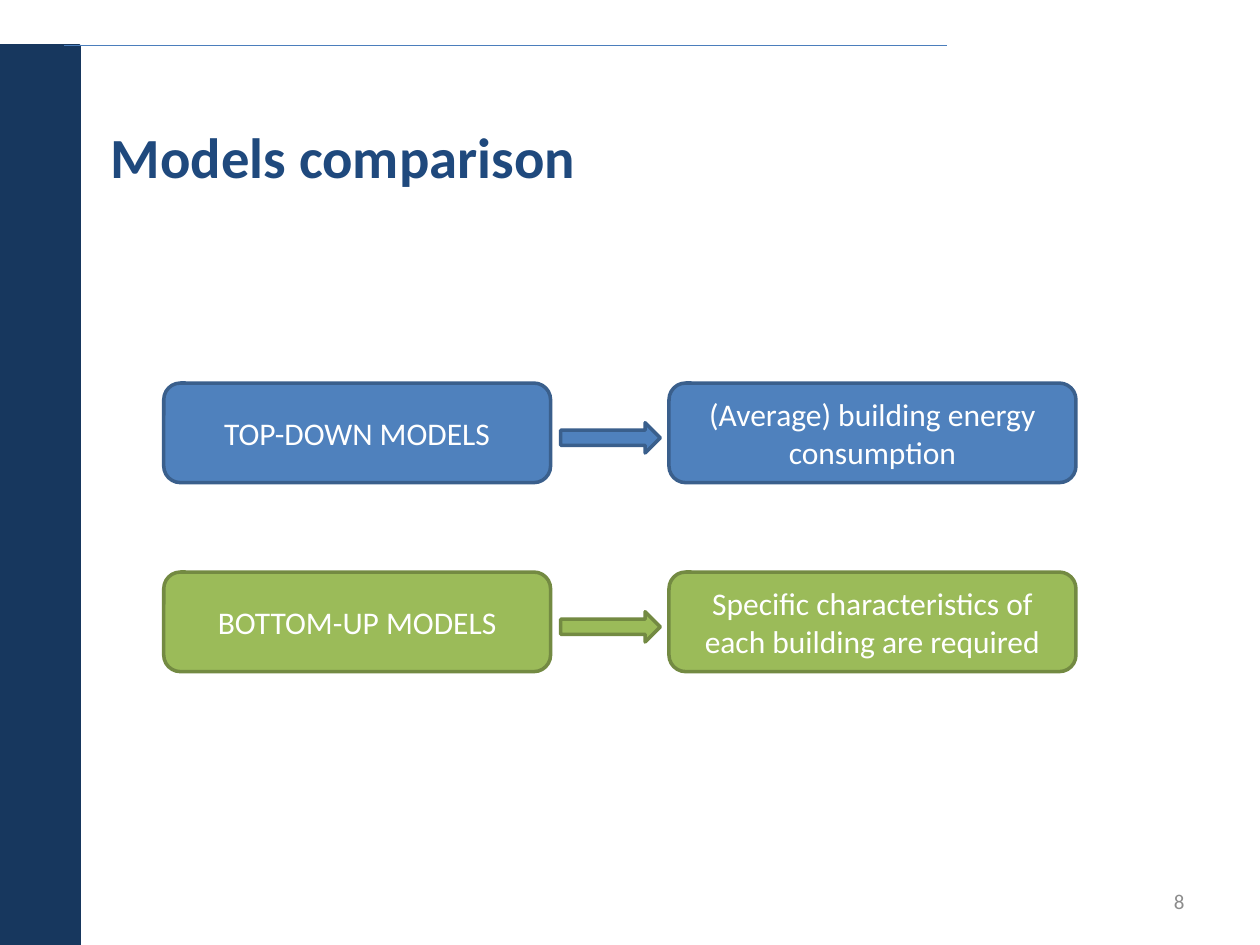
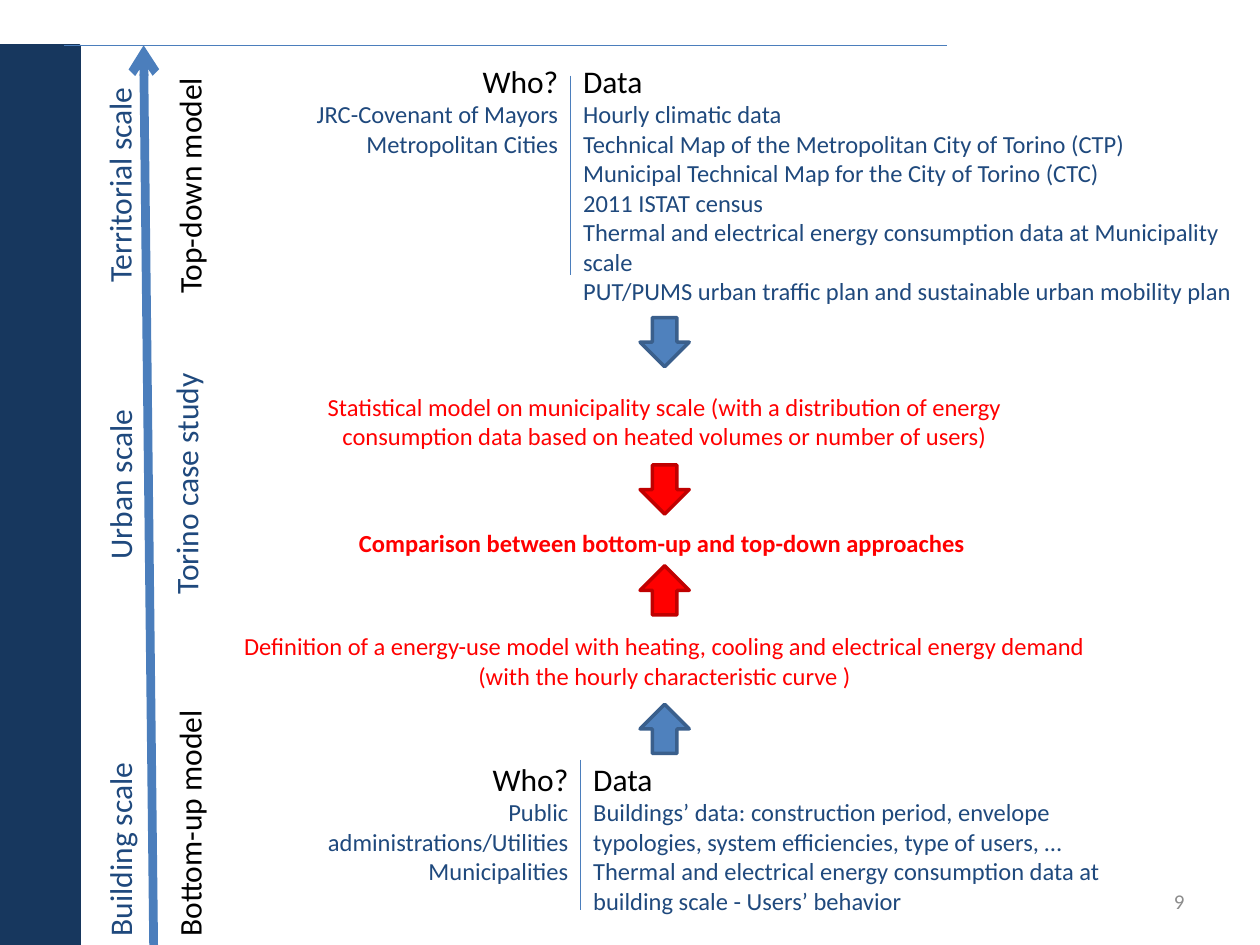
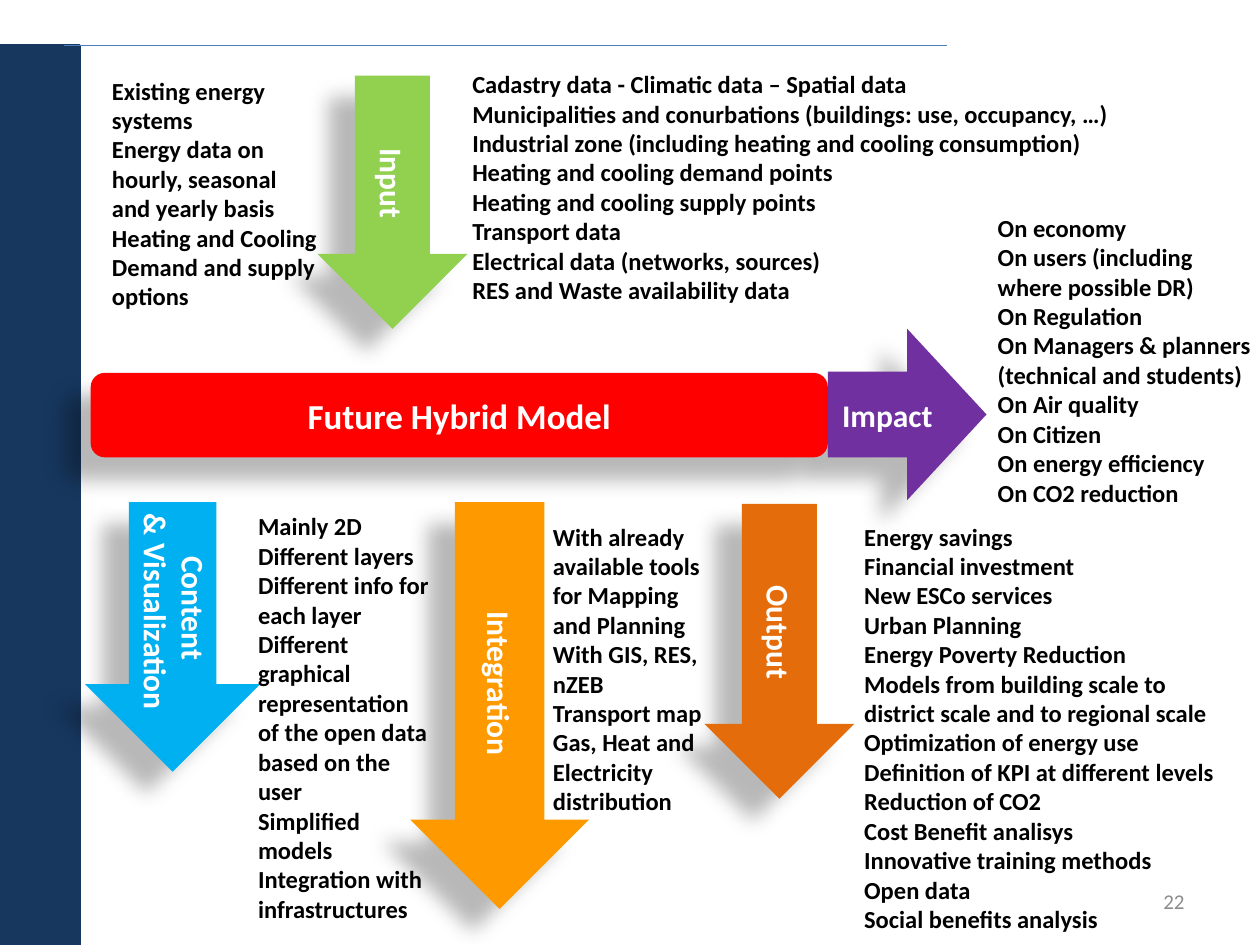
"""Builds three slides comparing top-down, bottom-up and hybrid energy models."""
from dataclasses import dataclass

from lxml.etree import SubElement
from pptx import Presentation
from pptx.dml.color import RGBColor
from pptx.enum.shapes import MSO_CONNECTOR, MSO_SHAPE
from pptx.enum.text import MSO_ANCHOR, PP_ALIGN
from pptx.oxml.ns import qn
from pptx.util import Inches, Pt


@dataclass(frozen=True)
class Theme:
    """Colours, font and type sizes shared by the slides."""
    font: str = "Calibri"
    band: str = "17375E"
    navy: str = "1F497D"
    rule: str = "4B7EBC"
    blue: str = "4F81BD"
    blue_edge: str = "3A5F8C"
    olive: str = "9BBB59"
    olive_edge: str = "738A42"
    red: str = "FF0000"
    red_edge: str = "C00000"
    green: str = "92D050"
    purple: str = "7030A0"
    rust: str = "E46C0A"
    amber: str = "FF9900"
    sky: str = "00B0F0"
    grey: str = "8C8C8C"
    black: str = "000000"
    white: str = "FFFFFF"
    title: float = 32.4
    banner: int = 20
    label: int = 18
    body: int = 14
    number: int = 12


THEME = Theme()
deck = Presentation()
deck.slide_width, deck.slide_height = Inches(10), Inches(7.5)
CELL = deck.slide_width / 100


def add_block(slide, kind, frame, fill=None, edge=None, rotation=0):
    """Add a shape, or a text box when kind is None, framed in grid cells."""
    place = [round(cells * CELL) for cells in frame]
    if kind is None:
        block = slide.shapes.add_textbox(*place)
    else:
        block = slide.shapes.add_shape(kind, *place)
        block.shadow.inherit = False
        block.fill.solid()
        block.fill.fore_color.rgb = RGBColor.from_string(fill)
        if edge:
            block.line.color.rgb = RGBColor.from_string(edge)
            block.line.width = Pt(2)
        else:
            block.line.fill.background()
    block.rotation = rotation
    return block


def write(block, lines, size, color, bold=False, align=PP_ALIGN.LEFT):
    """Fill a block with one paragraph per line and format the runs."""
    block.text_frame.text = "\n".join(lines)
    block.text_frame.word_wrap = True
    for paragraph in block.text_frame.paragraphs:
        paragraph.alignment = align
        for run in paragraph.runs:
            run.font.name = THEME.font
            run.font.size = Pt(size)
            run.font.bold = bold
            run.font.color.rgb = RGBColor.from_string(color)


comparison = deck.slides.add_slide(deck.slide_layouts[5])
scales = deck.slides.add_slide(deck.slide_layouts[6])
hybrid = deck.slides.add_slide(deck.slide_layouts[6])

band = add_block(comparison, MSO_SHAPE.RECTANGLE, (0, 3.6, 6.3, 71.4), THEME.band, THEME.band)
lines = []
for slide, ends, weight in (
    (comparison, (5.1, 3.6, 75.2, 3.6), 0.75),
    (scales, (12.2, 75.3, 11.4, 3.6), 5),
    (scales, (45.3, 6, 45.3, 21.8), 0.75),
    (scales, (46.1, 60.3, 46.1, 72.2), 0.75),
):
    line = slide.shapes.add_connector(
        MSO_CONNECTOR.STRAIGHT, *[round(cells * CELL) for cells in ends])
    line.line.color.rgb = RGBColor.from_string(THEME.rule)
    line.line.width = Pt(weight)
    SubElement(line.element.spPr, qn("a:effectLst"))
    lines.append(line)
header_rule, scale_axis = lines[:2]
SubElement(scale_axis.element.spPr.find(qn("a:ln")), qn("a:tailEnd"), type="arrow")
for shared in (band, header_rule):
    deck.slide_master.shapes.element.append(shared.element)

for slide, number in ((comparison, "8"), (scales, "9"), (hybrid, "22")):
    page = add_block(slide, None, (71.7, 69.5, 23.3, 4))
    write(page, [number], THEME.number, THEME.grey, align=PP_ALIGN.RIGHT)
    page.text_frame.vertical_anchor = MSO_ANCHOR.MIDDLE

title = comparison.shapes.title
title.left, title.top, title.width, title.height = [
    round(cells * CELL) for cells in (7.8, 9.2, 90.6, 6.3)]
write(title, ["Models comparison"], THEME.title, THEME.navy, bold=True)
title.text_frame.vertical_anchor = MSO_ANCHOR.MIDDLE

for row, (model, need, fill, edge) in enumerate((
    ("TOP-DOWN MODELS", "(Average) building energy consumption", THEME.blue, THEME.blue_edge),
    ("BOTTOM-UP MODELS", "Specific characteristics of each building are required",
     THEME.olive, THEME.olive_edge),
)):
    top = 30.4 + 15 * row
    add_block(comparison, MSO_SHAPE.RIGHT_ARROW, (44.5, top + 3.15, 7.9, 2.4), fill, edge)
    for left, width, words in ((13, 30.7, model), (53.1, 32.3, need)):
        card = add_block(comparison, MSO_SHAPE.ROUNDED_RECTANGLE,
                         (left, top, width, 7.9), fill, edge)
        write(card, [words], THEME.label, THEME.white, align=PP_ALIGN.CENTER)

for words, left, top, width, color, align in (
    ("Bottom-up model", 2.4, 60.7, 25.2, THEME.black, PP_ALIGN.LEFT),
    ("Top-down model", 2.4, 15.8, 25.2, THEME.black, PP_ALIGN.RIGHT),
    ("Building scale", -3.1, 60.7, 25.2, THEME.navy, PP_ALIGN.LEFT),
    ("Territorial scale", 0.4, 13, 18.1, THEME.navy, PP_ALIGN.RIGHT),
    ("Urban scale", 2, 35.9, 15, THEME.navy, PP_ALIGN.LEFT),
    ("Torino case study", 4.5, 35.9, 20.5, THEME.navy, PP_ALIGN.LEFT),
):
    scale_label = add_block(scales, None, (left, top, width, 4), rotation=270)
    write(scale_label, [words], THEME.label, color, align=align)

for frame, align, entries in (
    ((19.3, 4.4, 26, 8.8), PP_ALIGN.RIGHT,
     ["Who?", "JRC-Covenant of Mayors", "Metropolitan Cities"]),
    ((45.3, 4.4, 54.3, 20.5), PP_ALIGN.LEFT,
     ["Data", "Hourly climatic data",
      "Technical Map of the Metropolitan City of Torino (CTP)",
      "Municipal Technical Map for the City of Torino (CTC)",
      "2011 ISTAT census",
      "Thermal and electrical energy consumption data at Municipality scale",
      "PUT/PUMS urban traffic plan and sustainable urban mobility plan"]),
    ((20.1, 59.8, 26, 11.1), PP_ALIGN.RIGHT,
     ["Who?", "Public administrations/Utilities", "Municipalities"]),
    ((46.1, 59.8, 43.3, 13.5), PP_ALIGN.LEFT,
     ["Data",
      "Buildings’ data: construction period, envelope typologies, system efficiencies, "
      "type of users, …",
      "Thermal and electrical energy consumption data at building scale - Users’ behavior"]),
):
    sources = add_block(scales, None, frame)
    write(sources, entries, THEME.body, THEME.navy, align=align)
    heading = sources.text_frame.paragraphs[0].runs[0].font
    heading.size = Pt(THEME.label)
    heading.color.rgb = RGBColor.from_string(THEME.black)

for frame, words, bold in (
    ((24, 30.6, 57.5, 5.7),
     "Statistical model on municipality scale (with a distribution of energy consumption data "
     "based on heated volumes or number of users)", False),
    ((24, 41.4, 57.5, 3.4), "Comparison between bottom-up and top-down approaches ", True),
    ((17.3, 49.6, 70.9, 5.7),
     "Definition of a energy-use model with heating, cooling and electrical energy demand "
     "(with the hourly characteristic curve )", False),
):
    step = add_block(scales, None, frame)
    write(step, [words], THEME.body, THEME.red, bold, PP_ALIGN.CENTER)

for top, fill, edge, rotation in (
    (25.2, THEME.blue, THEME.blue_edge, 0),
    (36.9, THEME.red, THEME.red_edge, 0),
    (44.9, THEME.red, THEME.red_edge, 180),
    (55.9, THEME.blue, THEME.blue_edge, 180),
):
    add_block(scales, MSO_SHAPE.DOWN_ARROW, (50.8, top, 3.9, 3.9), fill, edge, rotation)

for kind, frame, rotation, fill, words, size in (
    (MSO_SHAPE.RIGHT_ARROW, (3, 43.6, 21.4, 13.9), 90, THEME.sky, "", THEME.label),
    (MSO_SHAPE.DOWN_ARROW, (25.2, 6, 11.9, 20.1), 0, THEME.green, "Input", THEME.label),
    (MSO_SHAPE.RIGHT_ARROW, (65.7, 26.1, 12.6, 13.6), 0, THEME.purple, "Impact", THEME.label),
    (MSO_SHAPE.DOWN_ARROW, (55.9, 40, 11.9, 23.4), 0, THEME.rust, "Output", THEME.label),
    (MSO_SHAPE.RIGHT_ARROW, (23.5, 48.9, 32.3, 14.2), 90, THEME.amber, "Integration", THEME.label),
    (MSO_SHAPE.ROUNDED_RECTANGLE, (7.2, 29.6, 58.5, 6.7), 0, THEME.red,
     "Future Hybrid Model", THEME.banner),
):
    stage = add_block(hybrid, kind, frame, fill, rotation=rotation)
    shadow = SubElement(stage.element.spPr.find(qn("a:effectLst")), qn("a:outerShdw"),
                        blurRad=str(Pt(11.8)), dist=str(Pt(19.7)),
                        dir=str(141 * 60000), rotWithShape="0")
    tint = SubElement(shadow, qn("a:srgbClr"), val=THEME.black)
    SubElement(tint, qn("a:alpha"), val="28000")
    if words:
        write(stage, [words], size, THEME.white, True, PP_ALIGN.CENTER)
    if kind == MSO_SHAPE.DOWN_ARROW:
        stage.element.txBody.bodyPr.set("vert", "vert")

content_label = add_block(hybrid, None, (5, 45, 17.7, 7.1), rotation=90)
write(content_label, ["Content ", "& Visualization"], THEME.label, THEME.white,
      True, PP_ALIGN.CENTER)
content_label.text_frame.word_wrap = False

for frame, entries in (
    ((36.5, 5, 52.7, 22.9),
     ["Cadastry data - Climatic data – Spatial data",
      "Municipalities and conurbations (buildings: use, occupancy, …)",
      "Industrial zone (including heating and cooling consumption)",
      "Heating and cooling demand points", "Heating and cooling supply points",
      "Transport data", "Electrical data (networks, sources)",
      "RES and Waste availability data"]),
    ((78.2, 16.4, 22.5, 29.3),
     ["On economy", "On users (including where possible DR)", "On Regulation",
      "On Managers & planners (technical and students)", "On Air quality", "On Citizen",
      "On energy efficiency", "On CO2 reduction"]),
    ((67.6, 40.9, 29.8, 38.7),
     ["Energy savings", "Financial investment", "New ESCo services", "Urban Planning",
      "Energy Poverty Reduction",
      "Models from building scale to district scale and to regional scale",
      "Optimization of energy use", "Definition of KPI at different levels",
      "Reduction of CO2", "Cost Benefit analisys", "Innovative training methods",
      "Open data", "Social benefits analysis"]),
    ((42.9, 40.9, 14.7, 24.6),
     ["With already available tools for Mapping and Planning", "With GIS, RES, nZEB",
      "Transport map", "Gas, Heat and Electricity distribution"]),
    ((7.9, 5.5, 18.5, 19.9),
     ["Existing energy systems", "Energy data on hourly, seasonal and yearly basis",
      "Heating and Cooling Demand and supply options"]),
    ((19.5, 40.1, 16, 36.4),
     ["Mainly 2D", "Different layers Different info for each layer",
      "Different graphical representation of the open data based on the user",
      "Simplified models", "Integration with infrastructures"]),
):
    details = add_block(hybrid, None, frame)
    write(details, entries, THEME.body, THEME.black, bold=True)

deck.save("out.pptx")
